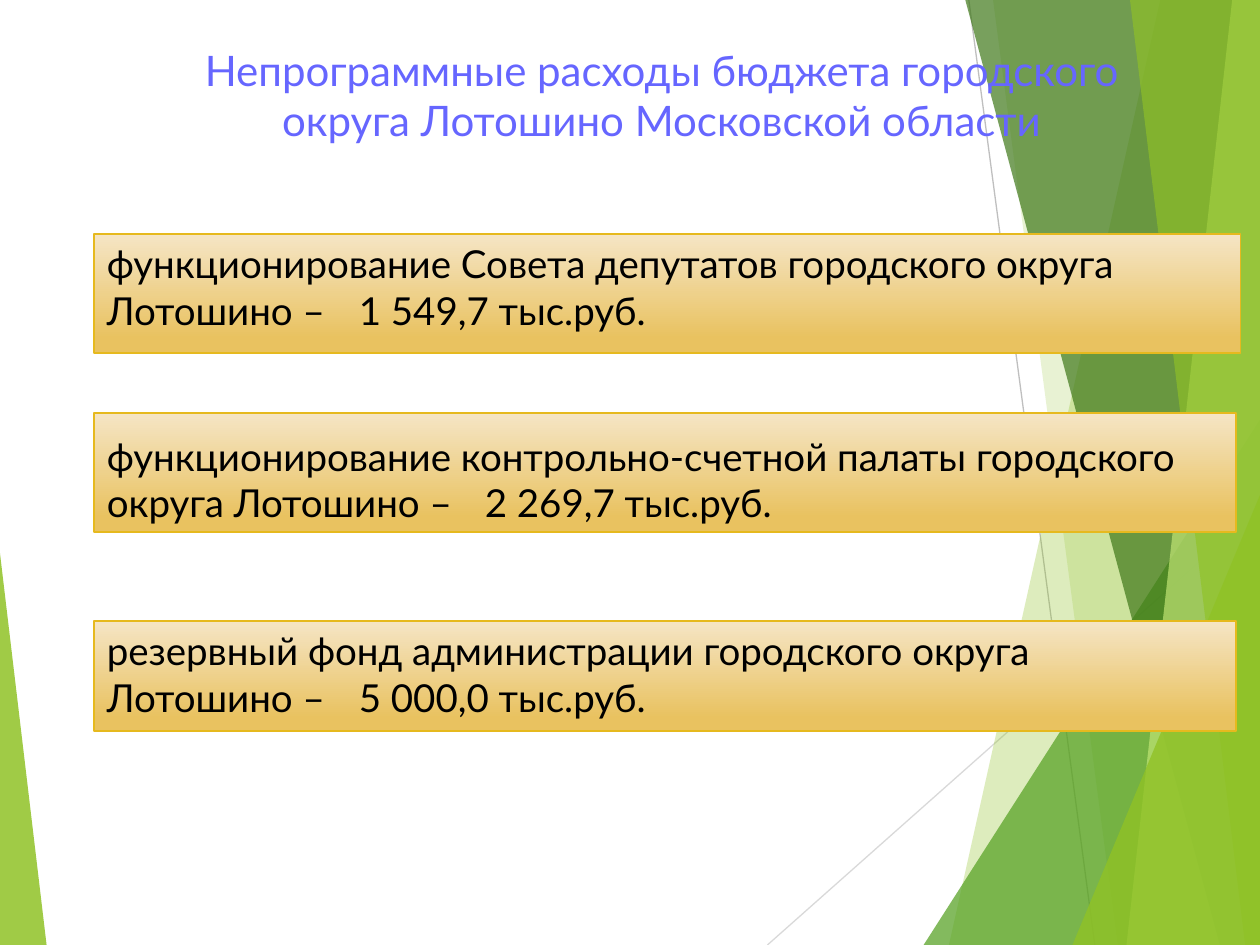
"""Build the slide on non-programme budget spending of the Lotoshino district."""
from lxml import etree
from pptx import Presentation
from pptx.dml.color import RGBColor
from pptx.enum.shapes import MSO_CONNECTOR, MSO_SHAPE
from pptx.enum.text import MSO_ANCHOR, MSO_AUTO_SIZE, PP_ALIGN
from pptx.oxml.ns import qn
from pptx.util import Cm, Pt

LINE = MSO_CONNECTOR.STRAIGHT
PEAK = MSO_SHAPE.ISOSCELES_TRIANGLE
TOP, BOTTOM = MSO_ANCHOR.TOP, MSO_ANCHOR.BOTTOM
LEFT, CENTER = PP_ALIGN.LEFT, PP_ALIGN.CENTER
FIXED = MSO_AUTO_SIZE.NONE

VIOLET = RGBColor(0x66, 0x66, 0xFF)
BLACK = RGBColor(0x00, 0x00, 0x00)
LIME = RGBColor(0x90, 0xC2, 0x26)
GREEN = RGBColor(0x54, 0xA0, 0x21)
DARK = RGBColor(0x3F, 0x78, 0x19)
PALE = RGBColor(0xC0, 0xE4, 0x74)
CREAM = RGBColor(0xF5, 0xE5, 0xC5)
GOLD = RGBColor(0xE9, 0xC2, 0x60)
AMBER = RGBColor(0xE6, 0xB9, 0x1E)
GRAY = RGBColor(0xBF, 0xBF, 0xBF)
SILVER = RGBColor(0xD9, 0xD9, 0xD9)

WIDE, HIGH = 25.4, 19.05


def write(shape, text, size=22, color=BLACK, align=LEFT, anchor=TOP, before=0, tab=None):
    frame = shape.text_frame
    frame.word_wrap = True
    frame.auto_size = FIXED
    frame.vertical_anchor = anchor
    para = frame.paragraphs[0]
    para.alignment = align
    para.space_before = Pt(before)
    run = para.add_run()
    run.text = text
    font = run.font
    font.name, font.size, font.bold = "Lato", Pt(size), False
    font.color.rgb = color
    props = para._p.get_or_add_pPr()
    props.set("marL", "0")
    props.set("indent", "0")
    etree.SubElement(props, qn("a:buNone"))
    if tab:
        tabs = etree.SubElement(props, qn("a:tabLst"))
        etree.SubElement(tabs, qn("a:tab"), pos=str(Cm(tab)), algn="l")


def place(shape, left, top, width, height):
    shape.left, shape.top = Cm(left), Cm(top)
    shape.width, shape.height = Cm(width), Cm(height)


deck = Presentation()
deck.slide_width, deck.slide_height = Cm(WIDE), Cm(HIGH)
slide = deck.slides.add_slide(deck.slide_layouts[4])
shapes = slide.shapes

rays = [
    (19.53, 0, 22.07, HIGH, GRAY),
    (WIDE, 10.24, 15.47, HIGH, SILVER),
]
for *ends, color in rays:
    ray = shapes.add_connector(LINE, *[Cm(end) for end in ends])
    ray.line.color.rgb = color
    ray.line.width = Pt(0.75)
    etree.SubElement(ray._element.spPr, qn("a:effectLst"))

facets = [
    ((23.39, 19.13), LIME, 30),
    ((20.02, 22.53), LIME, 20),
    ((18.62, 8.46, 6.78, 1), GREEN, 72),
    ((19.46, 24.59), DARK, 70),
    ((24.84, 22.71), PALE, 70),
    ((22.78, 25.1), LIME, 65),
    ((21.62, 9.98, 3.78, 1), LIME, 80),
    ((0, 11.15, 0.94, 0), LIME, 85),
]
for form, color, alpha in facets:
    if len(form) == 2:
        high, low = form
        pen = shapes.build_freeform(Cm(high), 0)
        spots = [(WIDE, 0), (WIDE, HIGH), (low, HIGH)]
        pen.add_line_segments([(Cm(x), Cm(y)) for x, y in spots])
        facet = pen.convert_to_shape()
    else:
        left, top, width, tip = form
        facet = shapes.add_shape(PEAK, Cm(left), Cm(top), Cm(width), Cm(HIGH - top))
        facet.adjustments[0] = tip
    facet.shadow.inherit = False
    facet.line.fill.background()
    facet.fill.solid()
    facet.fill.fore_color.rgb = color
    tint = facet._element.spPr.find(".//" + qn("a:srgbClr"))
    etree.SubElement(tint, qn("a:alpha"), val=str(alpha * 1000))

title, *bodies, spare = list(slide.placeholders)[:5]
spare._element.getparent().remove(spare._element)

place(title, 2.54, 0.76, 21.59, 2.21)
write(title, "Непрограммные расходы бюджета городского округа Лотошино Московской области",
      size=24, color=VIOLET, align=CENTER)
shapes._spTree.append(title._element)

items = [
    (4.72, 23.11, 2.39, TOP, 7.95,
     "функционирование Совета депутатов городского округа Лотошино –\t1 549,7 тыс.руб."),
    (8.33, 23.01, 2.39, BOTTOM, 8.33,
     "функционирование контрольно-счетной палаты городского округа Лотошино –\t2 269,7 тыс.руб."),
    (12.52, 23.01, 2.21, TOP, 11.13,
     "резервный фонд администрации городского округа Лотошино –\t5 000,0 тыс.руб."),
]
for body, (top, width, height, anchor, tab, text) in zip(bodies, items):
    place(body, 1.9, top, width, height)
    body.fill.gradient()
    body.fill.gradient_angle = 270
    for stop, color, spot in zip(body.fill.gradient_stops, (CREAM, GOLD), (0, 0.88)):
        stop.color.rgb = color
        stop.position = spot
    body.line.color.rgb = AMBER
    body.line.width = Pt(1)
    write(body, text, anchor=anchor, before=10, tab=tab)
    shapes._spTree.append(body._element)

deck.save("out.pptx")
